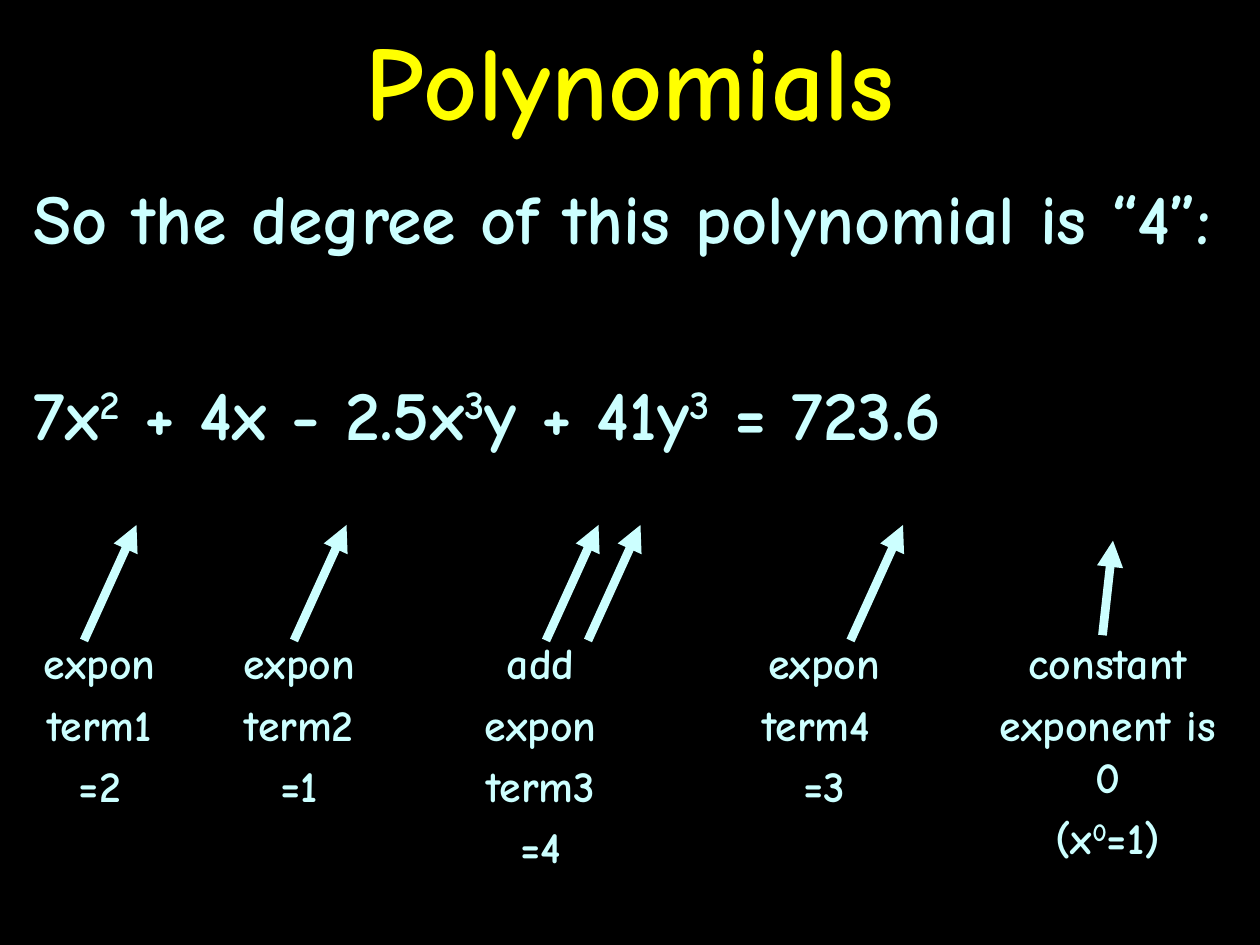
from lxml.etree import SubElement
from pptx import Presentation
from pptx.dml.color import RGBColor
from pptx.enum.shapes import MSO_CONNECTOR as Connector
from pptx.enum.text import MSO_ANCHOR as Anchor, MSO_AUTO_SIZE as AutoSize, PP_ALIGN as Align
from pptx.oxml.ns import qn
from pptx.util import Pt

BLACK = RGBColor(0x00, 0x00, 0x00)
YELLOW = RGBColor(0xFF, 0xFF, 0x00)
PALE_CYAN = RGBColor(0xCC, 0xFF, 0xFF)
FONT = "Comic Neue"

LABEL_TOP = 360
# left, width, lines
LABELS = [
    (12, 90, ["expon", "term1", "=2"]),
    (126, 90, ["expon", "term2", "=1"]),
    (264, 90, ["add", "expon", "term3", "=4"]),
    (426, 90, ["expon", "term4 ", "=3"]),
    (564, 138, ["constant", "exponent is 0", "(x^0^=1)"]),
]
TERM_ARROW_STARTS = [48, 168, 312, 336, 486]


def place(shape, left, top, width, height):
    shape.left, shape.top = Pt(left), Pt(top)
    shape.width, shape.height = Pt(width), Pt(height)


def write_paragraph(paragraph, text, size, color, align, space_before=0):
    """Write text in which ^...^ marks a superscript."""
    paragraph.alignment = align
    paragraph.space_before = Pt(space_before)
    font = paragraph.font
    font.name, font.size, font.bold = FONT, Pt(size), True
    font.color.rgb = color
    for index, part in enumerate(text.split("^")):
        run = paragraph.add_run()
        run.text = part
        if index % 2:
            run.font._element.set("baseline", "30000")


def remove_bullet(paragraph):
    properties = paragraph._p.get_or_add_pPr()
    properties.set("marL", "0")
    properties.set("indent", "0")
    SubElement(properties, qn("a:buNone"))


def fill_title(slide):
    title = slide.shapes.title
    place(title, 0, 0, 720, 90)
    title.text_frame.vertical_anchor = Anchor.MIDDLE
    write_paragraph(title.text_frame.paragraphs[0], "Polynomials", 60, YELLOW, Align.CENTER)


def fill_body(slide):
    body = slide.placeholders[1]
    place(body, 12, 96, 708, 444)
    frame = body.text_frame
    frame.auto_size = AutoSize.NONE
    statement, equation = frame.paragraphs[0], frame.add_paragraph()
    for paragraph, text, space in (
        (statement, "So the degree of this polynomial is “4”:", 8),
        (equation, "7x^2^ + 4x - 2.5x^3^y + 41y^3^ = 723.6", 64),
    ):
        remove_bullet(paragraph)
        write_paragraph(paragraph, text, 40, PALE_CYAN, Align.LEFT, space)


def add_label(slide, left, width, lines):
    box = slide.shapes.add_textbox(Pt(left), Pt(LABEL_TOP), Pt(width), Pt(54))
    frame = box.text_frame
    frame.word_wrap = True
    for index, line in enumerate(lines):
        paragraph = frame.add_paragraph() if index else frame.paragraphs[0]
        write_paragraph(paragraph, line, 25, PALE_CYAN, Align.CENTER, 5)


def add_arrow(slide, start_x, start_y, end_x, end_y):
    arrow = slide.shapes.add_connector(
        Connector.STRAIGHT, Pt(start_x), Pt(start_y), Pt(end_x), Pt(end_y))
    arrow.line.color.rgb = PALE_CYAN
    arrow.line.width = Pt(5)
    SubElement(arrow.line._get_or_add_ln(), qn("a:tailEnd"), type="triangle")
    SubElement(arrow._element.spPr, qn("a:effectLst"))


def main():
    presentation = Presentation()
    presentation.slide_width, presentation.slide_height = Pt(720), Pt(540)
    slide = presentation.slides.add_slide(presentation.slide_layouts[1])
    slide.background.fill.solid()
    slide.background.fill.fore_color.rgb = BLACK

    fill_title(slide)
    fill_body(slide)
    for left, width, lines in LABELS:
        add_label(slide, left, width, lines)
    for start_x in TERM_ARROW_STARTS:
        add_arrow(slide, start_x, 366, start_x + 30, 300)
    add_arrow(slide, 630, 363, 636, 309)

    presentation.save("out.pptx")


if __name__ == "__main__":
    main()
